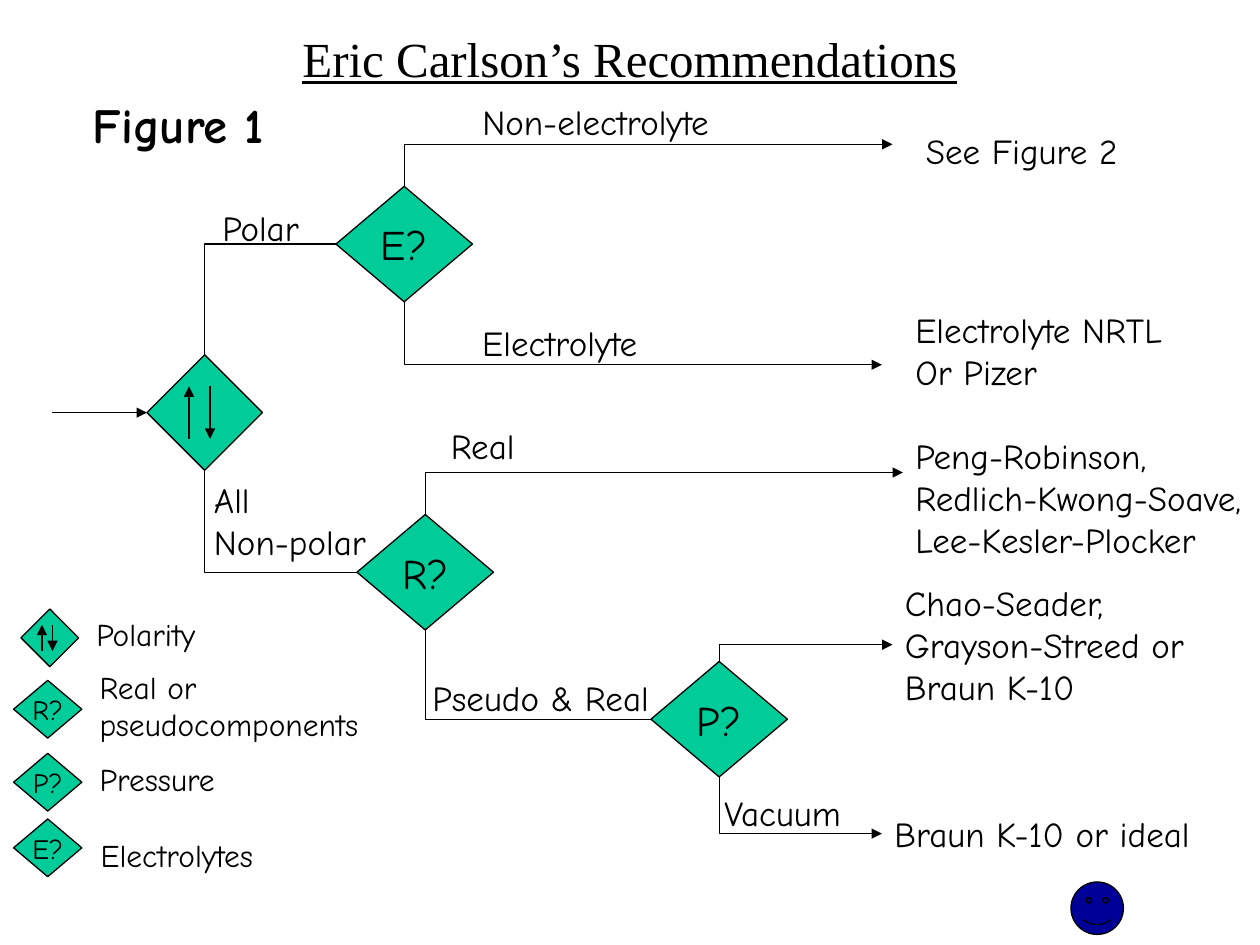
import typing

import lxml.etree
import pptx
import pptx.dml.color
import pptx.enum.shapes
import pptx.enum.text
import pptx.oxml.ns
import pptx.util

COLUMNS, ROWS = 120, 90
SLIDE_WIDTH, SLIDE_HEIGHT = pptx.util.Inches(10), pptx.util.Inches(7.5)
BLACK, GREEN, NAVY = "000000", "00CC99", "000099"
BODY_FONT, TITLE_FONT = "Comic Neue", "Times New Roman"
SHAPES = pptx.enum.shapes.MSO_SHAPE
CONNECTORS = pptx.enum.shapes.MSO_CONNECTOR
ALIGN = pptx.enum.text.PP_ALIGN
MIDDLE = pptx.enum.text.MSO_ANCHOR.MIDDLE


class Box(typing.NamedTuple):
    column: float
    row: float
    columns: float
    rows: float

    @property
    def middle(self) -> float:
        return self.column + self.columns / 2

    @property
    def center(self) -> float:
        return self.row + self.rows / 2

    @property
    def bottom(self) -> float:
        return self.row + self.rows


class Decision(typing.NamedTuple):
    box: Box
    text: str
    size: int


class Label(typing.NamedTuple):
    box: Box
    lines: tuple[str, ...]
    size: int = 20


class Branch(typing.NamedTuple):
    start_column: float
    start_row: float
    end_column: float
    end_row: float
    arrow: bool = True


POLARITY = Box(14, 33.8, 11, 11)
ELECTROLYTE = Box(32, 17.75, 13, 11)
REAL = Box(34, 49, 13, 11)
PRESSURE = Box(62, 63, 13, 11)
POLARITY_KEY = Box(2, 58, 5.5, 5.5)

DECISIONS = [
    Decision(ELECTROLYTE, "E?", 24),
    Decision(REAL, "R?", 24),
    Decision(PRESSURE, "P?", 24),
    Decision(Box(1.3, 64.8, 6.5, 5.5), "R?", 16),
    Decision(Box(1.3, 71.75, 6.5, 5.5), "P?", 16),
    Decision(Box(1.3, 78, 6.5, 5.5), "E?", 16),
]

BRANCHES = [
    Branch(POLARITY.middle, POLARITY.row, ELECTROLYTE.column, ELECTROLYTE.center, False),
    Branch(POLARITY.middle, POLARITY.bottom, REAL.column, REAL.center, False),
    Branch(REAL.middle, REAL.bottom, PRESSURE.column, PRESSURE.center, False),
    Branch(ELECTROLYTE.middle, ELECTROLYTE.row, 85, 13.75),
    Branch(ELECTROLYTE.middle, ELECTROLYTE.bottom, 84, 34.75),
    Branch(REAL.middle, REAL.row, 86, 45),
    Branch(PRESSURE.middle, PRESSURE.row, 85, 61.4),
    Branch(PRESSURE.middle, PRESSURE.bottom, 84, 79.4),
]

LABELS = [
    Label(Box(20, 19.1, 10.1, 5.2), ("Polar",)),
    Label(Box(19.2, 45, 17.8, 9.2), ("All", "Non-polar")),
    Label(Box(44.75, 9, 27.2, 5.2), ("Non-electrolyte",)),
    Label(Box(44.75, 30, 19.9, 5.2), ("Electrolyte",)),
    Label(Box(41.75, 39.85, 9, 5.2), ("Real",)),
    Label(Box(40, 63.85, 24, 5.2), ("Pseudo & Real",)),
    Label(Box(67.8, 74.75, 14, 5.2), ("Vacuum",)),
    Label(Box(87, 11.75, 22.3, 5.2), ("See Figure 2",)),
    Label(Box(86, 28.8, 29.8, 9.2), ("Electrolyte NRTL", "Or Pizer")),
    Label(Box(86, 40.8, 36.4, 13.2),
          ("Peng-Robinson,", "Redlich-Kwong-Soave,", "Lee-Kesler-Plocker")),
    Label(Box(85, 54.8, 32.8, 13.2), ("Chao-Seader,", "Grayson-Streed or", "Braun K-10")),
    Label(Box(84, 76.8, 32, 5.2), ("Braun K-10 or ideal",)),
    Label(Box(8, 58, 13.2, 4.8), ("Polarity",), 18),
    Label(Box(8.3, 63, 28.3, 8.4), ("Real or", "pseudocomponents"), 18),
    Label(Box(8.3, 71.75, 14.6, 4.8), ("Pressure",), 18),
    Label(Box(8.4, 79, 19.7, 4.8), ("Electrolytes",), 18),
]


def horizontal(column: float) -> int:
    return round(SLIDE_WIDTH * column / COLUMNS)


def vertical(row: float) -> int:
    return round(SLIDE_HEIGHT * row / ROWS)


def place(box: Box) -> tuple[int, int, int, int]:
    return (horizontal(box.column), vertical(box.row),
            horizontal(box.columns), vertical(box.rows))


def color(value: str) -> pptx.dml.color.RGBColor:
    return pptx.dml.color.RGBColor.from_string(value)


def write(frame, lines: tuple[str, ...], size: int, font_name: str = BODY_FONT, align=ALIGN.LEFT):
    for index, line in enumerate(lines):
        paragraph = frame.add_paragraph() if index else frame.paragraphs[0]
        paragraph.alignment = align
        run = paragraph.add_run()
        run.text = line
        run.font.name = font_name
        run.font.size = pptx.util.Pt(size)
        run.font.color.rgb = color(BLACK)
    return paragraph


def add_filled(slide, kind, box: Box, fill: str):
    shape = slide.shapes.add_shape(kind, *place(box))
    shape.shadow.inherit = False
    shape.fill.solid()
    shape.fill.fore_color.rgb = color(fill)
    shape.line.color.rgb = color(BLACK)
    shape.line.width = pptx.util.Pt(0.75)
    return shape


def add_decision(slide, decision: Decision) -> None:
    shape = add_filled(slide, SHAPES.FLOWCHART_DECISION, decision.box, GREEN)
    shape.text_frame.word_wrap = False
    shape.text_frame.vertical_anchor = MIDDLE
    write(shape.text_frame, (decision.text,), decision.size, align=ALIGN.CENTER)


def add_label(slide, label: Label) -> None:
    frame = slide.shapes.add_textbox(*place(label.box)).text_frame
    frame.word_wrap = False
    write(frame, label.lines, label.size)


def add_line(slide, kind, start: tuple, end: tuple, arrow_end: str = ""):
    connector = slide.shapes.add_connector(
        kind, horizontal(start[0]), vertical(start[1]), horizontal(end[0]), vertical(end[1]))
    connector.line.color.rgb = color(BLACK)
    connector.line.width = pptx.util.Pt(0.75)
    if arrow_end:
        line = connector.line._get_or_add_ln()
        lxml.etree.SubElement(line, pptx.oxml.ns.qn(arrow_end), type="triangle")
    properties = connector._element.spPr
    lxml.etree.SubElement(properties, pptx.oxml.ns.qn("a:effectLst"))
    return connector


def add_branch(slide, branch: Branch) -> None:
    connector = add_line(slide, CONNECTORS.ELBOW, (branch.end_column, branch.end_row),
                         (branch.start_column, branch.start_row),
                         "a:headEnd" if branch.arrow else "")
    connector._element.spPr.find(pptx.oxml.ns.qn("a:prstGeom")).set("prst", "bentConnector2")


def add_polarity(slide, box: Box, up_column: float, down_column: float, top: float, bottom: float):
    shape = add_filled(slide, SHAPES.FLOWCHART_DECISION, box, GREEN)
    add_line(slide, CONNECTORS.STRAIGHT, (down_column, top), (down_column, bottom), "a:tailEnd")
    add_line(slide, CONNECTORS.STRAIGHT, (up_column, bottom), (up_column, top), "a:tailEnd")
    return shape


def main() -> None:
    presentation = pptx.Presentation()
    presentation.slide_width, presentation.slide_height = SLIDE_WIDTH, SLIDE_HEIGHT
    slide = presentation.slides.add_slide(presentation.slide_layouts[5])

    title = slide.shapes.title
    title.left, title.top, title.width, title.height = place(Box(0, -1, 120, 13))
    title.text_frame.vertical_anchor = MIDDLE
    heading = write(title.text_frame, ("Eric Carlson’s Recommendations",), 28,
                    TITLE_FONT, ALIGN.CENTER)
    heading.runs[0].font.underline = True

    caption = slide.shapes.add_textbox(*place(Box(-1, 7, 36, 11))).text_frame
    caption.word_wrap = True
    caption.vertical_anchor = MIDDLE
    figure = write(caption, ("Figure 1",), 28, align=ALIGN.CENTER)
    figure.line_spacing = 0.7
    figure.runs[0].font.bold = True

    for branch in BRANCHES:
        add_branch(slide, branch)
    polarity = add_polarity(slide, POLARITY, 18, 20, 36.8, 41.8)
    inlet = add_line(slide, CONNECTORS.STRAIGHT, (5, POLARITY.center),
                     (POLARITY.column, POLARITY.center), "a:tailEnd")
    inlet.end_connect(polarity, 1)
    add_polarity(slide, POLARITY_KEY, 4, 5, 59.5, 62)
    for decision in DECISIONS:
        add_decision(slide, decision)
    for label in LABELS:
        add_label(slide, label)
    add_filled(slide, SHAPES.SMILEY_FACE, Box(102, 84, 5, 5), NAVY)

    presentation.save("out.pptx")


if __name__ == "__main__":
    main()
